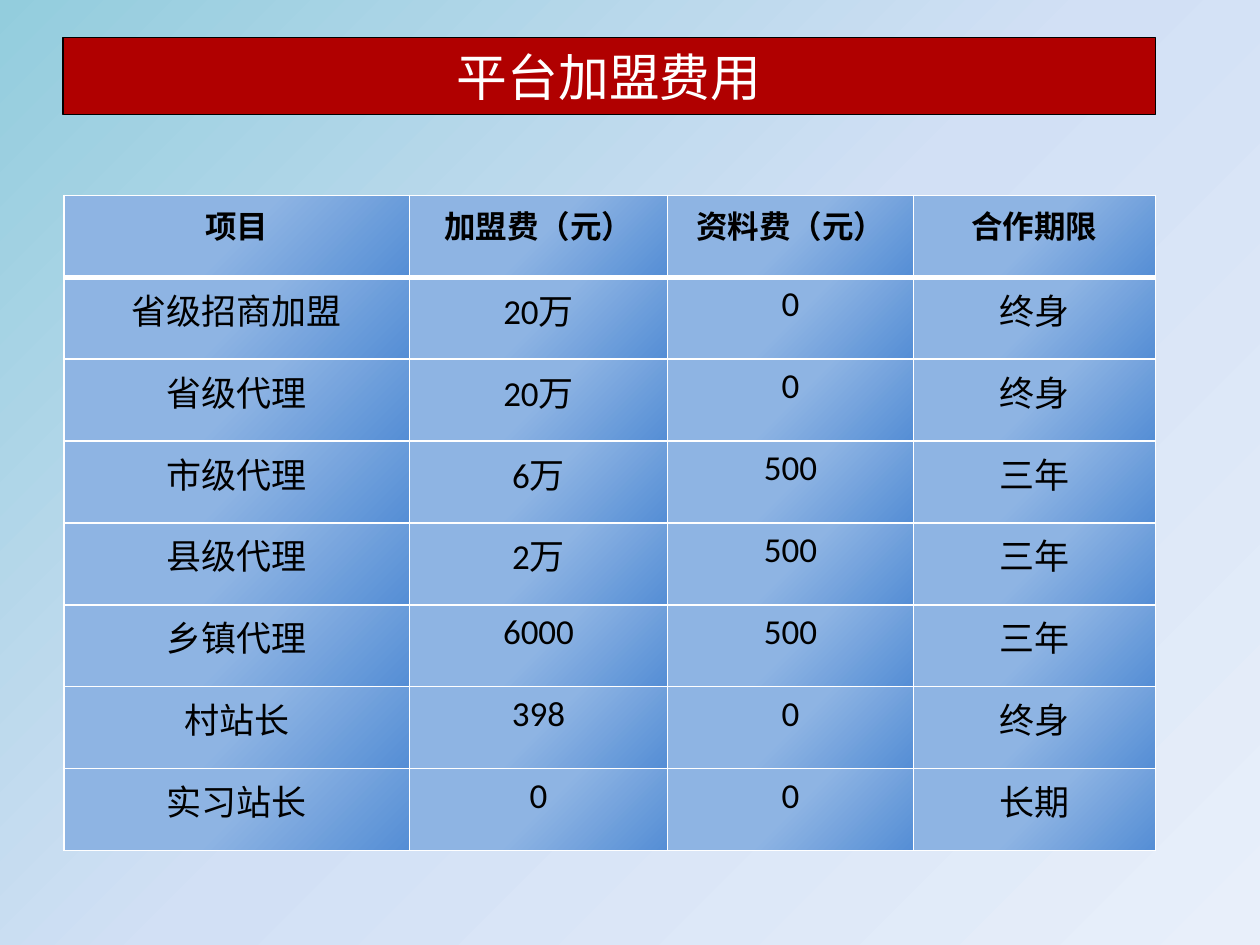
"""Build the slide with the table of platform joining fees."""
from lxml import etree
from pptx import Presentation
from pptx.dml.color import RGBColor
from pptx.enum import shapes, text
from pptx.oxml import ns
from pptx.util import Inches, Pt

HUE = {"white": "FFFFFF", "black": "000000", "red": "B00000",
       "teal": "93CDDD", "sky": "D2E0F5", "mist": "E8EFFA",
       "blue": "558ED5", "pale": "8EB4E3"}
ROWS = [
    ("项目", "加盟费（元）", "资料费（元）", "合作期限"),
    ("省级招商加盟", "20万", "0", "终身"),
    ("省级代理", "20万", "0", "终身"),
    ("市级代理", "6万", "500", "三年"),
    ("县级代理", "2万", "500", "三年"),
    ("乡镇代理", "6000", "500", "三年"),
    ("村站长", "398", "0", "终身"),
    ("实习站长", "0", "0", "长期"),
]
WIDTHS = [2.74, 2.05, 1.95, 1.92]
HIGH = 0.65


def blend(names, shade):
    stops = "".join(
        f'<a:gs pos="{i * 50000}"><a:srgbClr val="{HUE[n]}"/></a:gs>'
        for i, n in enumerate(names))
    return etree.fromstring(
        f'<a:gradFill {ns.nsdecls("a")} rotWithShape="1">'
        f'<a:gsLst>{stops}</a:gsLst>{shade}</a:gradFill>')


def style(para, size, hue, bold=False):
    para.alignment = text.PP_ALIGN.CENTER
    font = para.font
    font.name, font.size, font.bold = "Calibri", Pt(size), bold
    font.color.rgb = RGBColor.from_string(HUE[hue])


deck = Presentation()
deck.slide_width, deck.slide_height = Inches(10), Inches(7.5)
slide = deck.slides.add_slide(deck.slide_layouts[6])

slide.background.fill.solid()
solid = slide.element.find(".//" + ns.qn("p:bgPr") + "/" + ns.qn("a:solidFill"))
solid.getparent().replace(
    solid, blend(["teal", "sky", "mist"], '<a:lin ang="2700000" scaled="0"/>'))

title = slide.shapes.add_shape(
    shapes.MSO_SHAPE.RECTANGLE, Inches(0.5), Inches(0.3), Inches(8.67), Inches(0.61))
title.shadow.inherit = False
title.fill.solid()
title.fill.fore_color.rgb = RGBColor.from_string(HUE["red"])
title.line.color.rgb = RGBColor.from_string(HUE["black"])
title.line.width = Pt(0.75)
title.text_frame.text = "平台加盟费用"
title.text_frame.vertical_anchor = text.MSO_ANCHOR.MIDDLE
style(title.text_frame.paragraphs[0], 29, "white")

table = slide.shapes.add_table(
    len(ROWS), len(WIDTHS), Inches(0.51), Inches(1.55),
    Inches(sum(WIDTHS)), Inches(HIGH * len(ROWS))).table
for col, wide in zip(table.columns, WIDTHS):
    col.width = Inches(wide)

for r, row in enumerate(ROWS):
    table.rows[r].height = Inches(HIGH)
    for c, word in enumerate(row):
        cell = table.cell(r, c)
        cell.text = word
        style(cell.text_frame.paragraphs[0], 20 if r else 18, "black", r == 0)
        props = cell._tc.get_or_add_tcPr()
        for side in "LRTB":
            thick = (r, side) in [(0, "B"), (1, "T")]
            edge = etree.SubElement(
                props, ns.qn("a:ln" + side), w=str(Pt(3 if thick else 1)))
            fill = etree.SubElement(edge, ns.qn("a:solidFill"))
            etree.SubElement(fill, ns.qn("a:srgbClr"), val=HUE["white"])
        props.append(blend(
            ["blue", "pale", "pale"],
            '<a:path path="circle"><a:fillToRect l="100000" t="100000"/></a:path>'))

deck.save("out.pptx")
